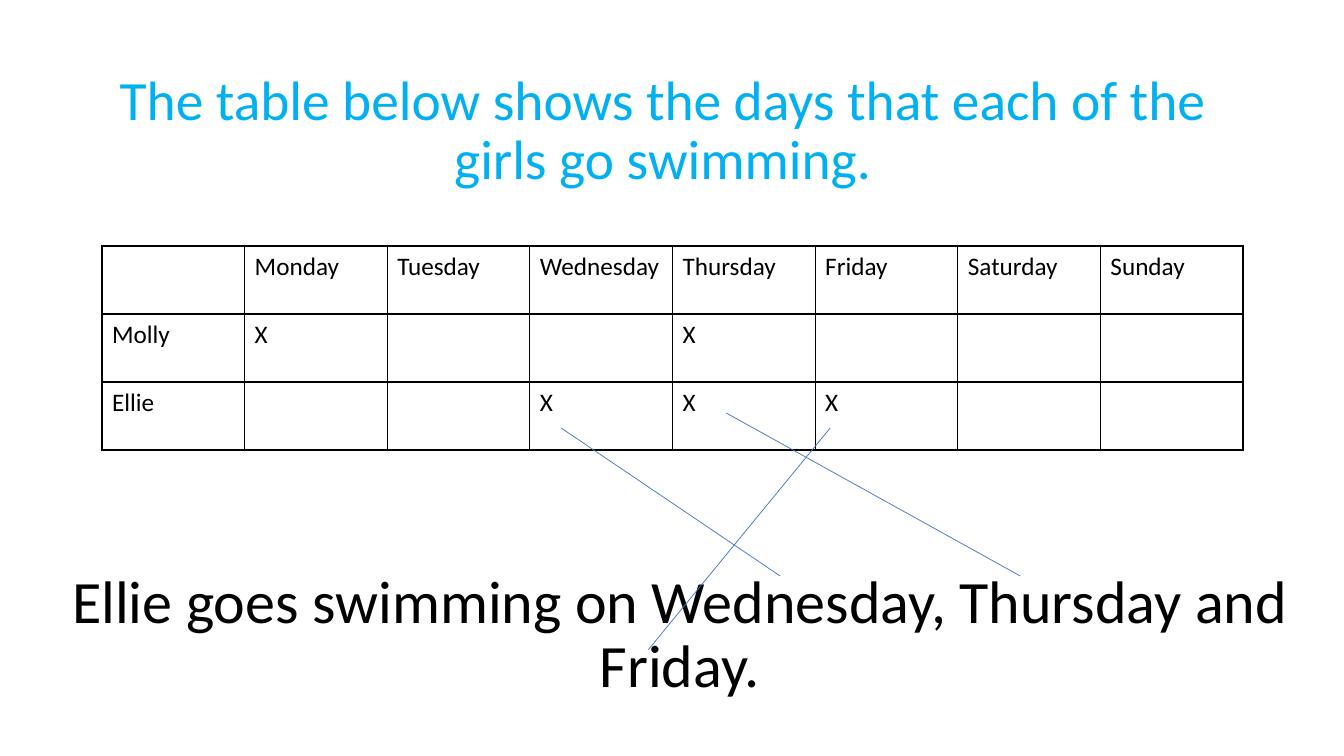
"""Build a slide with a table of swimming days and its answer."""
from lxml.etree import SubElement
from pptx import Presentation
from pptx.dml.color import RGBColor
from pptx.enum.shapes import MSO_CONNECTOR
from pptx.enum.text import MSO_ANCHOR, PP_ALIGN
from pptx.oxml import parse_xml
from pptx.oxml.ns import nsdecls, qn
from pptx.util import Inches, Pt

FONT = "Calibri"
BLACK = "000000"
CAPTIONS = [
    ("The table below shows the days that each of the girls go swimming.",
     (83, 59, 1159, 146), 39.6, "00B0F0"),
    ("Ellie goes swimming on Wednesday, Thursday and Friday.",
     (37, 563, 1285, 146), 42.9, BLACK),
]
DAYS = ["Monday", "Tuesday", "Wednesday", "Thursday", "Friday", "Saturday", "Sunday"]
SWIMS = {
    "Molly": ["Monday", "Thursday"],
    "Ellie": ["Wednesday", "Thursday", "Friday"],
}
TABLE_X, TABLE_Y, TABLE_W, ROW_H = 102, 246, 1141, 68
LINKS = [
    (561, 428, 780, 576),
    (1020, 576, 726, 413),
    (648, 650, 830, 428),
]


def px(n):
    return round(n * Inches(1) / 100.8)


def rgb(color):
    return RGBColor.from_string(color)


def add_run(p, text, size, color):
    r = p.add_run()
    r.text = text
    r.font.name, r.font.size = FONT, Pt(size)
    r.font.color.rgb = rgb(color)


def add_caption(s, text, box, size, color):
    tf = s.shapes.add_textbox(*map(px, box)).text_frame
    tf.word_wrap = True
    tf.vertical_anchor = MSO_ANCHOR.MIDDLE
    p = tf.paragraphs[0]
    p.alignment, p.line_spacing = PP_ALIGN.CENTER, 0.9
    add_run(p, text, size, color)


def add_borders(cell):
    tc_pr = cell._tc.get_or_add_tcPr()
    for i, side in enumerate(("lnL", "lnR", "lnT", "lnB")):
        tc_pr.insert(i, parse_xml(
            f'<a:{side} {nsdecls("a")} w="{Pt(1)}"><a:solidFill>'
            f'<a:srgbClr val="{BLACK}"/></a:solidFill></a:{side}>'))


def add_swim_table(s):
    rows = [["", *DAYS]]
    rows += [[girl, *("X" if day in days else "" for day in DAYS)]
             for girl, days in SWIMS.items()]
    table = s.shapes.add_table(len(rows), len(rows[0]), px(TABLE_X), px(TABLE_Y),
                               px(TABLE_W), px(ROW_H * len(rows))).table
    table.first_row = table.horz_banding = False
    for i, row in enumerate(rows):
        for j, text in enumerate(row):
            cell = table.cell(i, j)
            cell.fill.background()
            add_borders(cell)
            if text:
                add_run(cell.text_frame.paragraphs[0], text, 18, BLACK)


def add_link(s, ends):
    link = s.shapes.add_connector(MSO_CONNECTOR.STRAIGHT, *map(px, ends))
    link.line.color.rgb = rgb("4472C4")
    link.line.width = Pt(0.5)
    SubElement(link._element.spPr, qn("a:effectLst"))


def main():
    prs = Presentation()
    prs.slide_width, prs.slide_height = Inches(13.33), Inches(7.5)
    s = prs.slides.add_slide(prs.slide_layouts[6])
    add_swim_table(s)
    for caption in CAPTIONS:
        add_caption(s, *caption)
    for ends in LINKS:
        add_link(s, ends)
    prs.save("out.pptx")


if __name__ == "__main__":
    main()
